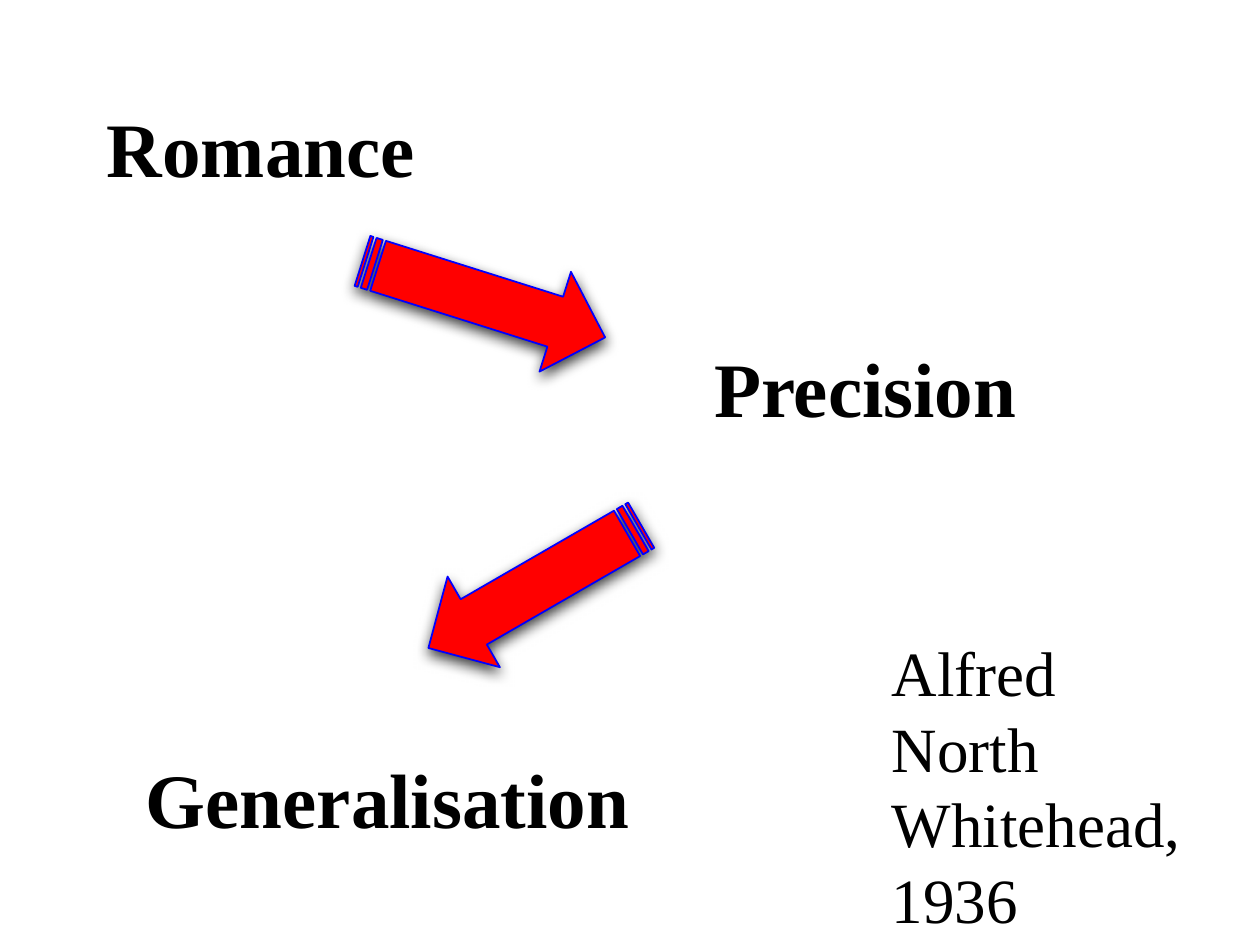
from lxml.etree import SubElement
from pptx import Presentation
from pptx.dml.color import RGBColor
from pptx.enum.shapes import MSO_SHAPE
from pptx.oxml.ns import qn
from pptx.util import Pt

BLACK = RGBColor(0, 0, 0)
RED = RGBColor(255, 0, 0)
BLUE = RGBColor(0, 0, 255)


class Deck:
    font = {"name": "Times New Roman", "size": Pt(44), "bold": True}
    shade = {"blurRad": Pt(8), "dist": Pt(3), "dir": 90 * 60000}

    def __init__(self, slide):
        self.slide = slide

    def text(self, words, box, **style):
        frame = self.slide.shapes.add_textbox(*map(Pt, box)).text_frame
        frame.word_wrap = True
        frame.text = words
        font = frame.paragraphs[0].runs[0].font
        for key, value in {**self.font, **style}.items():
            setattr(font, key, value)
        font.color.rgb = BLACK

    def arrow(self, box, turn):
        shape = self.slide.shapes.add_shape(
            MSO_SHAPE.STRIPED_RIGHT_ARROW, *map(Pt, box))
        shape.rotation = turn
        shape.fill.solid()
        shape.fill.fore_color.rgb = RED
        shape.line.color.rgb = BLUE
        shape.line.width = Pt(1)
        self.shadow(shape)

    def shadow(self, shape):
        shape.shadow.inherit = False
        effects = shape.element.spPr.find(qn("a:effectLst"))
        outer = SubElement(effects, qn("a:outerShdw"), rotWithShape="0")
        for key, value in self.shade.items():
            outer.set(key, str(int(value)))
        color = SubElement(outer, qn("a:srgbClr"), val=str(BLACK))
        SubElement(color, qn("a:alpha"), val="75000")


def main():
    show = Presentation()
    show.slide_width, show.slide_height = Pt(720), Pt(540)
    deck = Deck(show.slides.add_slide(show.slide_layouts[6]))
    deck.text("Romance", (54, 54, 576, 319.7))
    deck.arrow((203.8, 141.1, 145.4, 59.8), 17.5)
    deck.text("Precision", (401, 190.8, 257.8, 60.5))
    deck.arrow((235.4, 305.3, 140.4, 59.8), 150)
    deck.text("Generalisation", (76.3, 426.2, 354.2, 60.5))
    deck.text("Alfred North Whitehead, 1936", (502.6, 358.6, 181.4, 181.4),
              size=Pt(36), bold=False)
    show.save("out.pptx")


if __name__ == "__main__":
    main()
